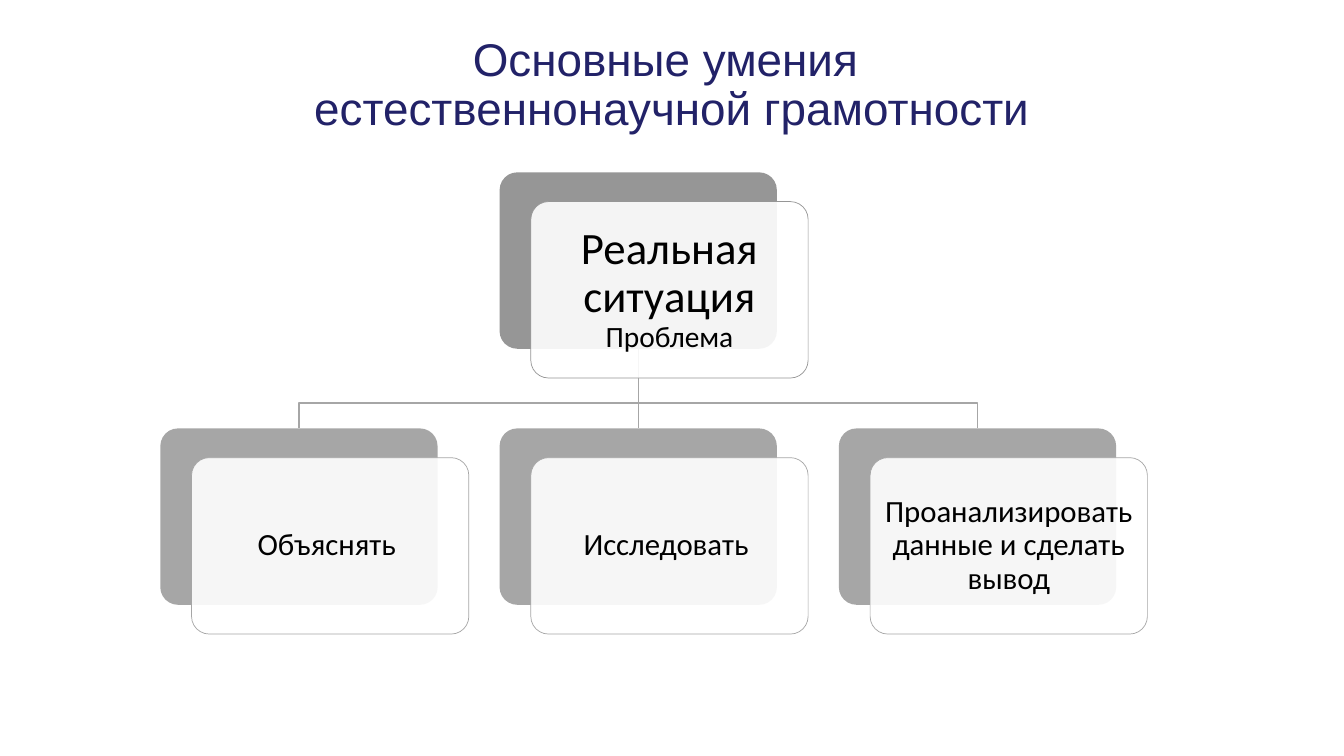
from lxml import etree
from pptx import Presentation
from pptx.dml.color import RGBColor
from pptx.enum.shapes import MSO_CONNECTOR, MSO_SHAPE
from pptx.enum.text import MSO_ANCHOR, PP_ALIGN
from pptx.oxml.ns import qn
from pptx.util import Inches, Pt

NAVY = RGBColor(0x22, 0x22, 0x68)
BLACK = RGBColor(0x00, 0x00, 0x00)
WHITE = RGBColor(0xFF, 0xFF, 0xFF)
DARK_GRAY = RGBColor(0x96, 0x96, 0x96)
LIGHT_GRAY = RGBColor(0xA6, 0xA6, 0xA6)

TITLE_LINES = ["Основные умения ", "естественнонаучной грамотности"]
SITUATION = [("Реальная ситуация", 32), (" Проблема", 21)]
SKILLS = [
    [("Объяснять ", 22)],
    [("Исследовать ", 22)],
    [("Проанализировать данные и сделать вывод", 22)],
]

CARD_WIDTH, CARD_HEIGHT = 2.75, 1.75
CARD_SHIFT_X, CARD_SHIFT_Y = 0.31, 0.29
TEXT_MARGIN = 0.05
FIRST_LEFT, COLUMN_STEP = 1.59, 3.365
SITUATION_TOP, SKILLS_TOP = 1.71, 4.25
BRANCH_TOP, BRANCH_MIDDLE = 3.45, 4.0

presentation = Presentation()
presentation.slide_width = Inches(13.33)
presentation.slide_height = Inches(7.5)
slide = presentation.slides.add_slide(presentation.slide_layouts[6])
shapes = slide.shapes


def add_text_box(left, top, width, height, inset_x, inset_y):
    """Add a wrapped, vertically centred text box; return its centred paragraph."""
    frame = shapes.add_textbox(
        Inches(left), Inches(top), Inches(width), Inches(height)).text_frame
    frame.word_wrap = True
    frame.vertical_anchor = MSO_ANCHOR.MIDDLE
    frame.margin_left = frame.margin_right = Inches(inset_x)
    frame.margin_top = frame.margin_bottom = Inches(inset_y)
    paragraph = frame.paragraphs[0]
    paragraph.alignment = PP_ALIGN.CENTER
    paragraph.line_spacing = 0.9
    return paragraph


def add_run(paragraph, text, size, font_name, color):
    run = paragraph.add_run()
    run.text = text
    run.font.size = Pt(size)
    run.font.name = font_name
    run.font.color.rgb = color


def add_rounded_box(left, top, color):
    box = shapes.add_shape(
        MSO_SHAPE.ROUNDED_RECTANGLE,
        Inches(left), Inches(top), Inches(CARD_WIDTH), Inches(CARD_HEIGHT))
    box.adjustments[0] = 0.1
    box.shadow.inherit = False
    box.fill.solid()
    box.fill.fore_color.rgb = color
    box.line.fill.background()
    return box


def add_card(left, top, color, runs, inset):
    """Add a gray box, a translucent white box shifted over it, and its text."""
    add_rounded_box(left, top, color)
    left, top = left + CARD_SHIFT_X, top + CARD_SHIFT_Y
    front = add_rounded_box(left, top, WHITE)
    front.line.color.rgb = color
    front.line.width = Pt(0.5)
    white = front.fill._xPr.find(qn("a:solidFill")).find(qn("a:srgbClr"))
    etree.SubElement(white, qn("a:alpha")).set("val", "90000")
    paragraph = add_text_box(
        left + TEXT_MARGIN, top + TEXT_MARGIN,
        CARD_WIDTH - 2 * TEXT_MARGIN, CARD_HEIGHT - 2 * TEXT_MARGIN, inset, inset)
    for text, size in runs:
        add_run(paragraph, text, size, "Calibri", BLACK)


def add_branch(start_x, end_x):
    """Join the situation to a skill: straight below it, otherwise with elbows."""
    if start_x == end_x:
        branch = shapes.add_connector(
            MSO_CONNECTOR.STRAIGHT, Inches(start_x), Inches(BRANCH_TOP),
            Inches(end_x), Inches(SKILLS_TOP))
        etree.SubElement(branch._element.spPr, qn("a:effectLst"))
    else:
        builder = shapes.build_freeform(Inches(start_x), Inches(BRANCH_TOP))
        corners = [(start_x, BRANCH_MIDDLE), (end_x, BRANCH_MIDDLE), (end_x, SKILLS_TOP)]
        builder.add_line_segments(
            [(Inches(x), Inches(y)) for x, y in corners], close=False)
        branch = builder.convert_to_shape()
        branch.fill.background()
        branch.shadow.inherit = False
    branch.line.color.rgb = LIGHT_GRAY
    branch.line.width = Pt(1)


title = add_text_box(1.07, 0.3, 11.19, 1.11, 0.1, 0.05)
for index, line in enumerate(TITLE_LINES):
    if index:
        title.add_line_break()
    add_run(title, line, 32.7, "Arial", NAVY)

skill_lefts = [FIRST_LEFT + index * COLUMN_STEP for index in range(len(SKILLS))]
situation_left = skill_lefts[len(SKILLS) // 2]

for left in reversed(skill_lefts):
    add_branch(situation_left + CARD_WIDTH / 2, left + CARD_WIDTH / 2)
add_card(situation_left, SITUATION_TOP, DARK_GRAY, SITUATION, 0.13)
for left, runs in zip(skill_lefts, SKILLS):
    add_card(left, SKILLS_TOP, LIGHT_GRAY, runs, 0.09)

presentation.save("out.pptx")
